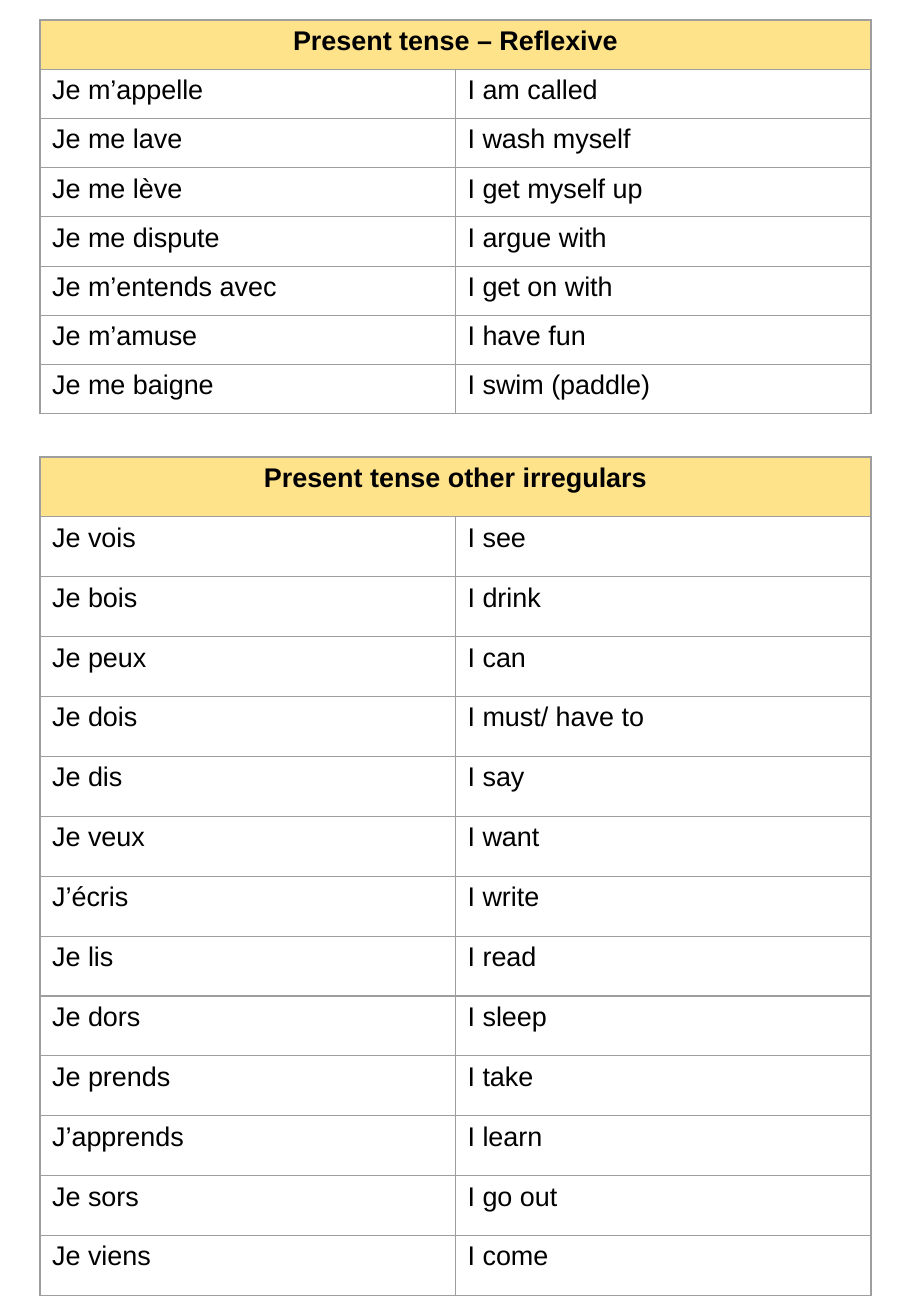
from lxml import etree
from pptx import Presentation
from pptx import util as u
from pptx.dml.color import RGBColor
from pptx.enum import text
from pptx.oxml import ns

PX = 7526
BLACK = RGBColor(0x00, 0x00, 0x00)
GREY = RGBColor(0x9E, 0x9E, 0x9E)
YELLOW = RGBColor(0xFF, 0xE3, 0x8B)

REFLEXIVE = [
    ("Je m’appelle", "I am called"),
    ("Je me lave", "I wash myself"),
    ("Je me lève", "I get myself up"),
    ("Je me dispute", "I argue with"),
    ("Je m’entends avec", "I get on with"),
    ("Je m’amuse", "I have fun"),
    ("Je me baigne", "I swim (paddle)"),
]
IRREGULARS = [
    ("Je vois", "I see"),
    ("Je bois", "I drink"),
    ("Je peux", "I can"),
    ("Je dois", "I must/ have to"),
    ("Je dis", "I say"),
    ("Je veux", "I want"),
    ("J’écris", "I write"),
    ("Je lis", "I read"),
    ("Je dors", "I sleep"),
    ("Je prends", "I take"),
    ("J’apprends", "I learn"),
    ("Je sors", "I go out"),
    ("Je viens", "I come"),
]


class VerbSheet:
    """Holds the sheet's style and slide, and draws its verb tables."""

    font = "Arial"
    size = u.Pt(16)
    border = u.Pt(0.75)

    def __init__(self, presentation):
        self.slide = presentation.slides.add_slide(presentation.slide_layouts[6])

    def borders(self, cell):
        properties = cell._tc.get_or_add_tcPr()
        for side in ("a:lnL", "a:lnR", "a:lnT", "a:lnB"):
            line = etree.SubElement(properties, ns.qn(side), w=str(self.border))
            fill = etree.SubElement(line, ns.qn("a:solidFill"))
            etree.SubElement(fill, ns.qn("a:srgbClr"), val=str(GREY))

    def label(self, cell, words, bold=False):
        paragraph = cell.text_frame.paragraphs[0]
        run = paragraph.add_run()
        run.text = words
        run.font.name = self.font
        run.font.size = self.size
        run.font.bold = bold
        run.font.color.rgb = BLACK
        return paragraph

    def table(self, title, verbs, left, top, width, height):
        frame = self.slide.shapes.add_table(
            len(verbs) + 1, 2, left * PX, top * PX, width * PX, height * PX)
        table = frame.table
        table.first_row = table.horz_banding = False
        for cell in table.iter_cells():
            self.borders(cell)
            cell.fill.background()
        heading = table.cell(0, 0)
        heading.merge(table.cell(0, 1))
        heading.fill.solid()
        heading.fill.fore_color.rgb = YELLOW
        self.label(heading, title, bold=True).alignment = text.PP_ALIGN.CENTER
        for row, pair in enumerate(verbs, 1):
            for column, words in enumerate(pair):
                self.label(table.cell(row, column), words)


def main():
    presentation = Presentation()
    presentation.slide_width = 911 * PX
    presentation.slide_height = 1316 * PX
    sheet = VerbSheet(presentation)
    sheet.table("Present tense – Reflexive", REFLEXIVE, 40, 20, 831, 394)
    sheet.table("Present tense other irregulars", IRREGULARS, 40, 457, 831, 839)
    presentation.save("out.pptx")


if __name__ == "__main__":
    main()
